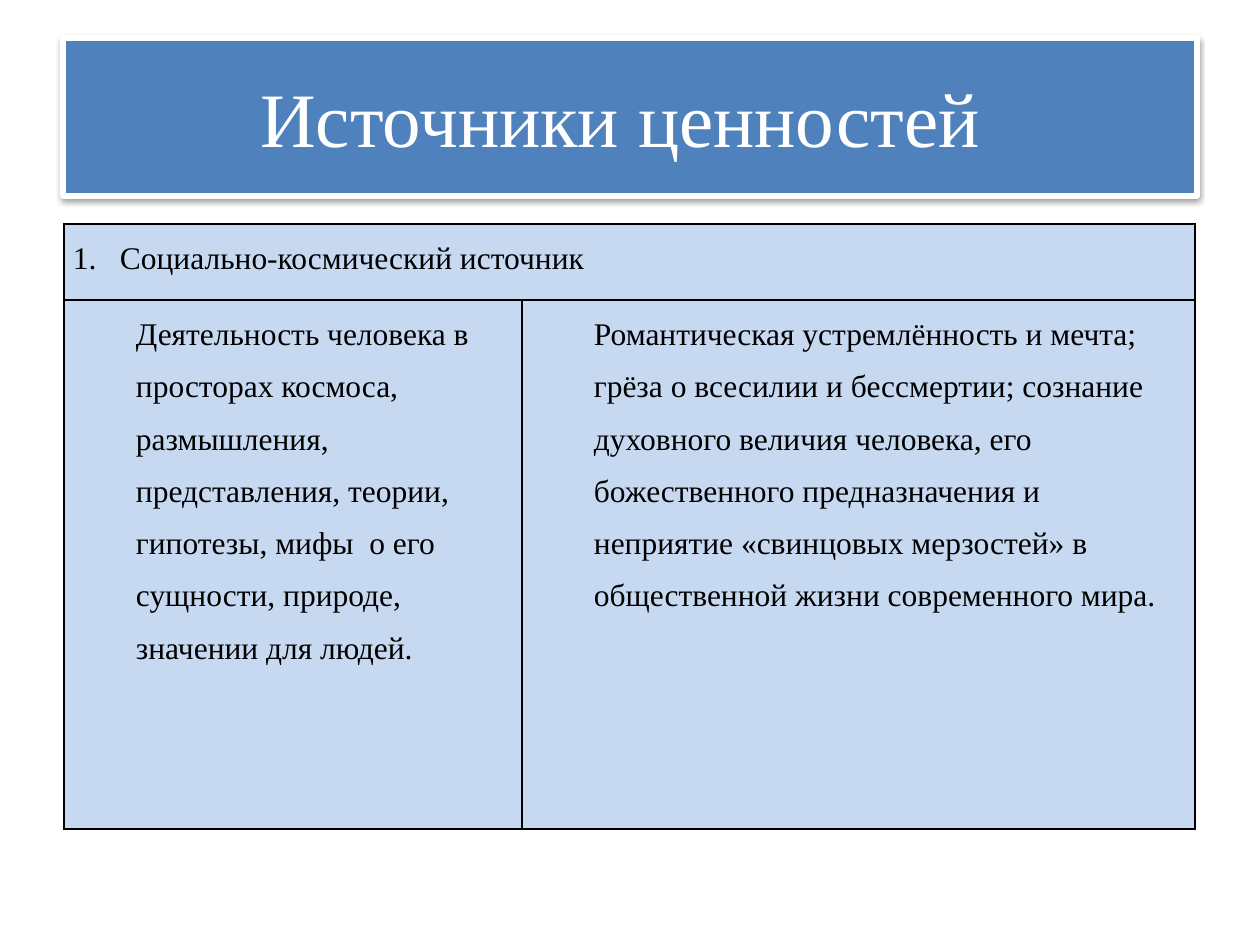
from dataclasses import dataclass

from lxml.etree import SubElement
from pptx import Presentation
from pptx.dml.color import RGBColor
from pptx.enum.text import MSO_ANCHOR, PP_ALIGN
from pptx.oxml import parse_xml
from pptx.oxml.ns import nsdecls, qn
from pptx.util import Emu, Pt

EMU_PER_PX = 914400 / 126


@dataclass(frozen=True)
class Theme:
    """Colours, font and type sizes of the slide."""
    font: str = "Times New Roman"
    title_size: int = 44
    body_size: int = 18
    banner: str = "4F81BD"
    light: str = "FFFFFF"
    cell: str = "C6D9F1"
    ink: str = "000000"


THEME = Theme()
TITLE = "Источники ценностей "
SOURCE = "Социально-космический источник"
ACTIVITY = (
    "Деятельность человека в просторах космоса, размышления, представления, "
    "теории, гипотезы, мифы  о его сущности, природе, значении для людей."
)
ASPIRATION = (
    "Романтическая устремлённость и мечта; грёза о всесилии и бессмертии; "
    "сознание духовного величия человека, его божественного предназначения и "
    "неприятие «свинцовых мерзостей» в общественной жизни современного мира."
)


def px(length):
    """Turn pixels into EMU."""
    return Emu(round(length * EMU_PER_PX))


def rgb(code):
    """Turn a hex code into a colour."""
    return RGBColor.from_string(code)


def add_text(paragraph, words, size, colour):
    """Add one formatted run to a paragraph."""
    run = paragraph.add_run()
    run.text = words
    run.font.name = THEME.font
    run.font.size = Pt(size)
    run.font.color.rgb = rgb(colour)


def add_shadow(shape):
    """Give a shape a soft shadow falling straight down."""
    shape._element.spPr.append(parse_xml(
        f'<a:effectLst {nsdecls("a")}>'
        f'<a:outerShdw blurRad="{Pt(3.1)}" dist="{Pt(1.6)}" dir="5400000" rotWithShape="0">'
        f'<a:srgbClr val="{THEME.ink}"><a:alpha val="38000"/></a:srgbClr>'
        '</a:outerShdw></a:effectLst>'
    ))


def fill_title(banner):
    """Turn the title placeholder into the coloured banner."""
    banner.left, banner.top, banner.width, banner.height = map(px, (63, 38, 1134, 158))
    banner.fill.solid()
    banner.fill.fore_color.rgb = rgb(THEME.banner)
    banner.line.color.rgb = rgb(THEME.light)
    banner.line.width = Pt(3)
    add_shadow(banner)
    banner.text_frame.vertical_anchor = MSO_ANCHOR.MIDDLE
    heading = banner.text_frame.paragraphs[0]
    heading.alignment = PP_ALIGN.CENTER
    add_text(heading, TITLE, THEME.title_size, THEME.light)


def style_cell(cell):
    """Set the fill, margins and borders of a cell."""
    cell.fill.solid()
    cell.fill.fore_color.rgb = rgb(THEME.cell)
    cell.margin_left = cell.margin_right = px(9)
    cell.margin_top = cell.margin_bottom = 0
    for position, side in enumerate("LRTB"):
        cell._tc.get_or_add_tcPr().insert(position, parse_xml(
            f'<a:ln{side} {nsdecls("a")} w="{Pt(1)}"><a:solidFill>'
            f'<a:srgbClr val="{THEME.ink}"/></a:solidFill></a:ln{side}>'
        ))


def write_cell(cell, words, margin, numbered=False):
    """Write an indented paragraph, numbered on request, into a cell."""
    paragraph = cell.text_frame.paragraphs[0]
    paragraph.line_spacing = 1.5
    properties = paragraph._p.get_or_add_pPr()
    properties.set("marL", str(px(margin)))
    properties.set("indent", str(-px(margin) if numbered else 0))
    if numbered:
        SubElement(properties, qn("a:buAutoNum"), type="arabicPeriod")
    add_text(paragraph, words, THEME.body_size, THEME.ink)


def add_sources_table(slide):
    """Add the table with a heading row over two descriptions."""
    widths, heights = (458, 673), (76, 529)
    table = slide.shapes.add_table(
        2, 2, px(64), px(224), px(sum(widths)), px(sum(heights))
    ).table
    table.first_row = table.horz_banding = False
    for column, width in zip(table.columns, widths):
        column.width = px(width)
    for row, height in zip(table.rows, heights):
        row.height = px(height)
    for cell in table.iter_cells():
        style_cell(cell)
    table.cell(0, 0).merge(table.cell(0, 1))
    write_cell(table.cell(0, 0), SOURCE, 47, numbered=True)
    for column, words in enumerate((ACTIVITY, ASPIRATION)):
        write_cell(table.cell(1, column), words, 63)


def main():
    """Build the slide and save it."""
    deck = Presentation()
    deck.slide_width, deck.slide_height = px(1260), px(945)
    slide = deck.slides.add_slide(deck.slide_layouts[5])
    fill_title(slide.shapes.title)
    add_sources_table(slide)
    deck.save("out.pptx")


if __name__ == "__main__":
    main()
